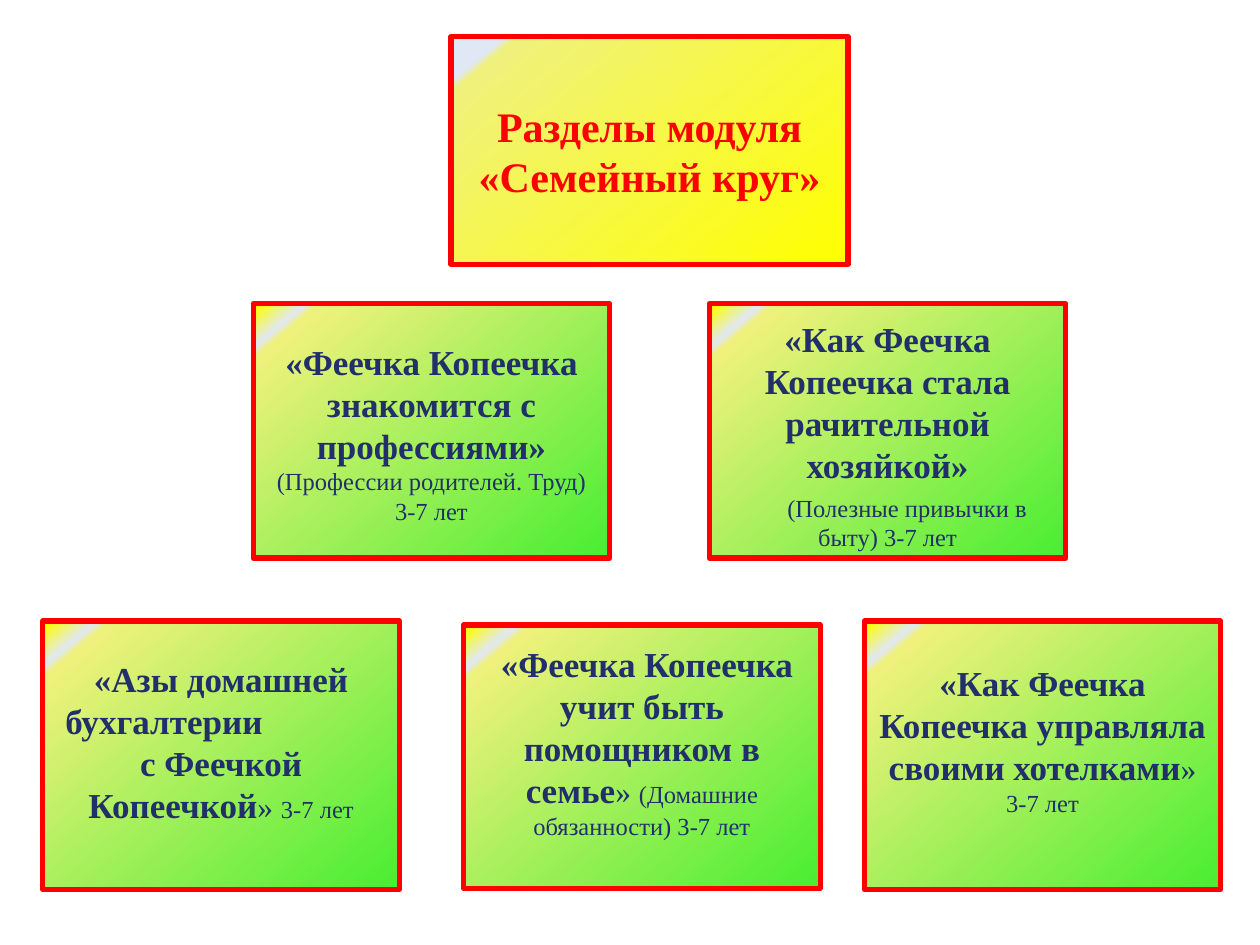
import pptx
import pptx.dml.color
import pptx.enum.shapes
import pptx.enum.text
import pptx.oxml
import pptx.oxml.ns
import pptx.util
from dataclasses import dataclass

Inches = pptx.util.Inches
Pt = pptx.util.Pt
Align = pptx.enum.text.PP_ALIGN
Anchor = pptx.enum.text.MSO_ANCHOR


@dataclass(frozen=True)
class Theme:
    font: str = "Times New Roman"
    red: str = "FF0000"
    navy: str = "21306A"
    title_size: int = 24
    name_size: int = 20
    quote_size: int = 18
    note_size: int = 14
    border: int = 3
    angle: int = 230
    title_stops: tuple = ((0, "FFFF00"), (90, "F0F17C"), (92, "E1E8F5"))
    card_stops: tuple = ((0, "48EE32"), (90, "F0F17C"), (92, "E1E8F5"), (99, "FFFF00"))


THEME = Theme()


def rgb(value):
    return pptx.dml.color.RGBColor.from_string(value)


def add_text(para, text, *, size, color=THEME.navy, bold=False):
    span = para.add_run()
    span.text = text
    span.font.name = THEME.font
    span.font.size = Pt(size)
    span.font.bold = bold
    span.font.color.rgb = rgb(color)


def name(text):
    return text, dict(size=THEME.name_size, bold=True)


def quote(text):
    return text, dict(size=THEME.quote_size)


def note(text):
    return text, dict(size=THEME.note_size)


def line(*spans, **layout):
    return spans, layout


class SlideBuilder:
    def __init__(self, slide, theme):
        self.slide = slide
        self.theme = theme

    def paint(self, box, stops):
        """Gradient fill with any number of stops, and the red border."""
        box.fill.gradient()
        gradient = box._element.spPr.find(pptx.oxml.ns.qn("a:gradFill"))
        for child in list(gradient):
            gradient.remove(child)
        marks = "".join(
            f'<a:gs pos="{position * 1000}"><a:srgbClr val="{color}"/></a:gs>'
            for position, color in stops)
        namespace = pptx.oxml.ns.nsdecls("a")
        gradient.append(pptx.oxml.parse_xml(f"<a:gsLst {namespace}>{marks}</a:gsLst>"))
        gradient.append(pptx.oxml.parse_xml(
            f'<a:lin {namespace} ang="{self.theme.angle * 60000}" scaled="0"/>'))
        box.line.color.rgb = rgb(self.theme.red)
        box.line.width = Pt(self.theme.border)

    def fill_text(self, box, lines, anchor, top=0.05):
        frame = box.text_frame
        frame.word_wrap = True
        frame.auto_size = pptx.enum.text.MSO_AUTO_SIZE.NONE
        frame.vertical_anchor = anchor
        frame.margin_top = Inches(top)
        for index, (spans, layout) in enumerate(lines):
            para = frame.add_paragraph() if index else frame.paragraphs[0]
            para.alignment = layout.get("align", Align.CENTER)
            para.space_before = Pt(layout.get("before", 0))
            properties = para._p.get_or_add_pPr()
            properties.set("marL", str(Inches(layout.get("left", 0))))
            properties.set("indent", str(Inches(layout.get("indent", 0))))
            for text, style in spans:
                add_text(para, text, **style)

    def title(self, left, top, width, height, lines):
        box = self.slide.shapes.title
        box.left, box.top = Inches(left), Inches(top)
        box.width, box.height = Inches(width), Inches(height)
        self.paint(box, self.theme.title_stops)
        style = dict(size=self.theme.title_size, color=self.theme.red, bold=True)
        self.fill_text(box, [line((text, style)) for text in lines], Anchor.MIDDLE)

    def card(self, left, top, width, height, text_top, lines):
        box = self.slide.shapes.add_shape(
            pptx.enum.shapes.MSO_SHAPE.RECTANGLE,
            Inches(left), Inches(top), Inches(width), Inches(height))
        box.shadow.inherit = False
        self.paint(box, self.theme.card_stops)
        self.fill_text(box, lines, Anchor.TOP, text_top)


CARD_WIDTH = 2.83

# Left, top, height, text offset, lines
CARDS = [
    (2.01, 2.41, 2.02, 0.29, [
        line(name("«Феечка Копеечка знакомится с профессиями» "),
             note("(Профессии родителей. Труд) 3-7 лет"))]),
    (5.63, 2.41, 2.02, 0.11, [
        line(name("«Как Феечка Копеечка стала рачительной хозяйкой»")),
        line(note("(Полезные привычки в быту) 3-7 лет"), before=4, indent=0.31)]),
    (0.34, 4.93, 2.13, 0.29, [
        line(name("«Азы домашней")),
        line(name("бухгалтерии"), align=Align.LEFT, left=0.08),
        line(name("с Феечкой Копеечкой"), quote("» "), note("3-7 лет"))]),
    (3.68, 4.96, 2.09, 0.14, [
        line(name("«Феечка Копеечка учит быть помощником в семье"), quote("» "),
             note("(Домашние обязанности) 3-7 лет"), indent=0.08)]),
    (6.86, 4.93, 2.13, 0.32, [
        line(name("«Как Феечка Копеечка управляла своими хотелками"), quote("»")),
        line(note("3-7 лет"))]),
]


def main():
    deck = pptx.Presentation()
    deck.slide_width, deck.slide_height = Inches(10), Inches(7.5)
    page = SlideBuilder(deck.slides.add_slide(deck.slide_layouts[5]), THEME)

    # Module title
    page.title(3.58, 0.29, 3.15, 1.81, ["Разделы модуля", "«Семейный круг»"])

    # Module sections
    for left, top, height, text_top, lines in CARDS:
        page.card(left, top, CARD_WIDTH, height, text_top, lines)

    deck.save("out.pptx")


if __name__ == "__main__":
    main()
